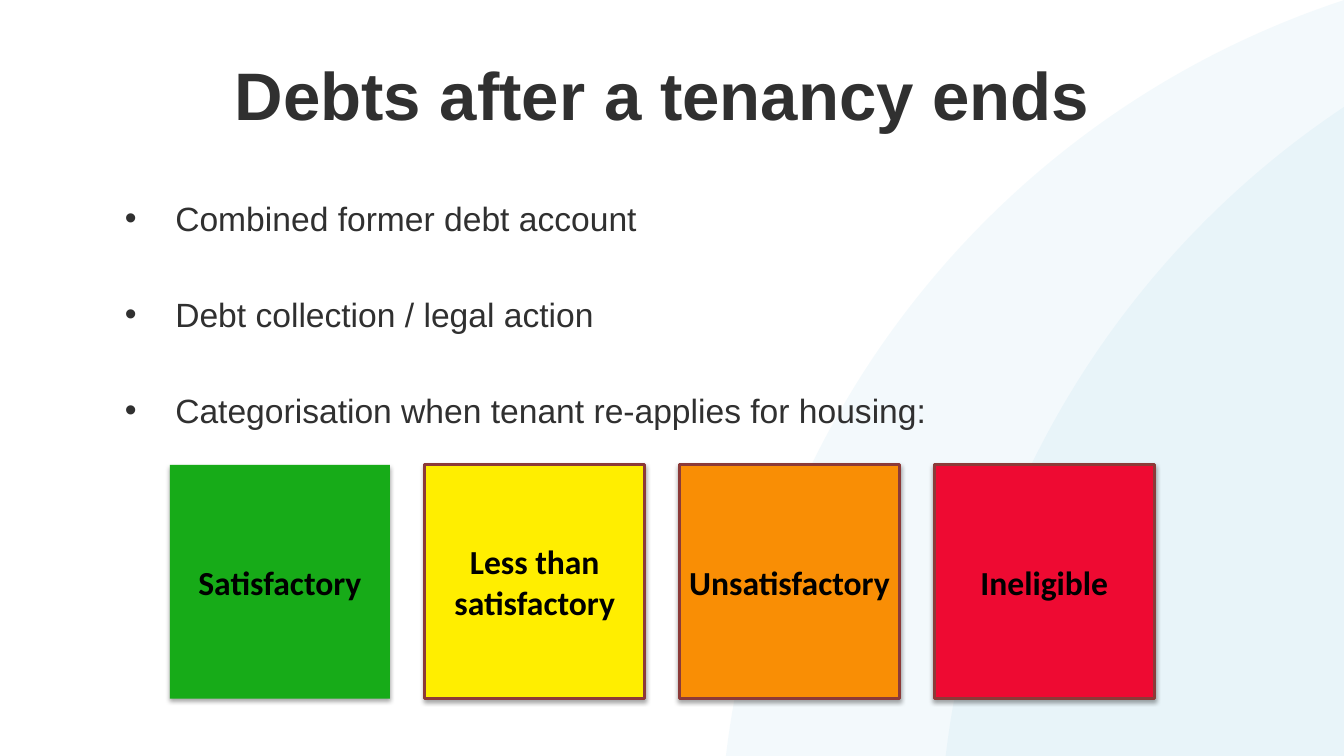
from lxml import etree
from pptx import Presentation
from pptx.dml.color import RGBColor
from pptx.enum.shapes import MSO_SHAPE
from pptx.enum.text import MSO_ANCHOR, MSO_AUTO_SIZE, PP_ALIGN
from pptx.oxml import parse_xml
from pptx.oxml.ns import nsdecls, qn
from pptx.util import Pt

OVAL, RECTANGLE = MSO_SHAPE.OVAL, MSO_SHAPE.RECTANGLE
MIDDLE, TOP = MSO_ANCHOR.MIDDLE, MSO_ANCHOR.TOP
CENTER, LEFT = PP_ALIGN.CENTER, PP_ALIGN.LEFT
NO_AUTOFIT = MSO_AUTO_SIZE.NONE

WHITE = RGBColor(0xFF, 0xFF, 0xFF)
BLACK = RGBColor(0x00, 0x00, 0x00)
CHARCOAL = RGBColor(0x30, 0x30, 0x30)
SKY = RGBColor(0x22, 0x9C, 0xD0)
MAROON = RGBColor(0x8C, 0x3A, 0x38)
GREEN = RGBColor(0x17, 0xAB, 0x18)
YELLOW = RGBColor(0xFF, 0xEE, 0x00)
ORANGE = RGBColor(0xF9, 0x8E, 0x05)
RED = RGBColor(0xEE, 0x0A, 0x32)

SHADOW = f"""<a:effectLst {nsdecls("a")}>
  <a:outerShdw blurRad="{Pt(3)}" dist="{Pt(1.8)}" dir="5400000" rotWithShape="0">
    <a:srgbClr val="000000"><a:alpha val="35000"/></a:srgbClr>
  </a:outerShdw>
</a:effectLst>"""


class SlideBuilder:
    """Holds the text style and the page being built; lengths are in points."""

    heading_font = "Arial"
    label_font = "Calibri"
    text_size = 24

    def __init__(self, page):
        self.page = page
        page.background.fill.solid()
        page.background.fill.fore_color.rgb = WHITE

    def place(self, shape, left, top, width, height):
        shape.left, shape.top = Pt(left), Pt(top)
        shape.width, shape.height = Pt(width), Pt(height)

    def style(self, para, font_name, size, color, bold, align):
        para.alignment = align
        font = para.font
        font.name, font.size, font.bold = font_name, Pt(size), bold
        font.color.rgb = color

    def backdrop_circle(self, left, top, diameter):
        circle = self.page.shapes.add_shape(
            OVAL, Pt(left), Pt(top), Pt(diameter), Pt(diameter))
        circle.shadow.inherit = False
        circle.fill.solid()
        circle.fill.fore_color.rgb = SKY
        circle.line.fill.background()
        # 5 % opacity
        color = circle.element.spPr.find(qn("a:solidFill"))[0]
        etree.SubElement(color, qn("a:alpha")).set("val", "5000")
        # Behind the placeholders
        circle.element.getparent().insert(2, circle.element)

    def title(self, text, *bounds):
        box = self.page.shapes.title
        self.place(box, *bounds)
        frame = box.text_frame
        frame.text = text
        frame.auto_size = NO_AUTOFIT
        frame.vertical_anchor = MIDDLE
        para = frame.paragraphs[0]
        para.line_spacing = 0.9
        self.style(para, self.heading_font, 48, CHARCOAL, True, CENTER)

    def bullets(self, items, gap, indent, *bounds):
        box = self.page.placeholders[1]
        self.place(box, *bounds)
        frame = box.text_frame
        frame.text = "\n".join(items)
        frame.auto_size = NO_AUTOFIT
        frame.vertical_anchor = TOP
        for para in frame.paragraphs:
            self.style(para, self.heading_font, self.text_size, CHARCOAL, False, LEFT)
            para.space_before, para.space_after = Pt(0), Pt(gap)
            properties = para._p.get_or_add_pPr()
            properties.set("marL", str(Pt(indent)))
            properties.set("indent", str(-Pt(indent)))

    def category(self, text, fill, outline, *bounds):
        box = self.page.shapes.add_shape(RECTANGLE, *map(Pt, bounds))
        box.fill.solid()
        box.fill.fore_color.rgb = fill
        if outline is None:
            box.line.fill.background()
        else:
            box.line.color.rgb = outline
            box.line.width = Pt(2)
        box.element.spPr.append(parse_xml(SHADOW))
        frame = box.text_frame
        frame.text = text
        frame.word_wrap = True
        frame.vertical_anchor = MIDDLE
        frame.margin_left = frame.margin_right = 0
        frame.margin_top = frame.margin_bottom = 0
        self.style(frame.paragraphs[0], self.label_font, self.text_size, BLACK, True, CENTER)


def main():
    deck = Presentation()
    deck.slide_width, deck.slide_height = Pt(960), Pt(540)
    builder = SlideBuilder(deck.slides.add_slide(deck.slide_layouts[1]))

    # Background circles
    for left in (671, 514):
        builder.backdrop_circle(left, -32.4, 1297.4)

    # Title and list
    builder.title("Debts after a tenancy ends", 67.7, 35.3, 810.7, 69.8)
    builder.bullets(
        ["Combined former debt account",
         "Debt collection / legal action",
         "Categorisation when tenant re-applies for housing:"],
        40, 36, 82, 137.5, 785.5, 187.2)

    # Row of housing categories
    categories = [
        ("Satisfactory", GREEN, None),
        ("Less than satisfactory", YELLOW, MAROON),
        ("Unsatisfactory", ORANGE, MAROON),
        ("Ineligible", RED, MAROON),
    ]
    row_left, row_top, width, height, pitch = 121.3, 332, 157.3, 167, 182
    for column, (text, fill, outline) in enumerate(categories):
        builder.category(text, fill, outline,
                         row_left + column * pitch, row_top, width, height)

    deck.save("out.pptx")


if __name__ == "__main__":
    main()
